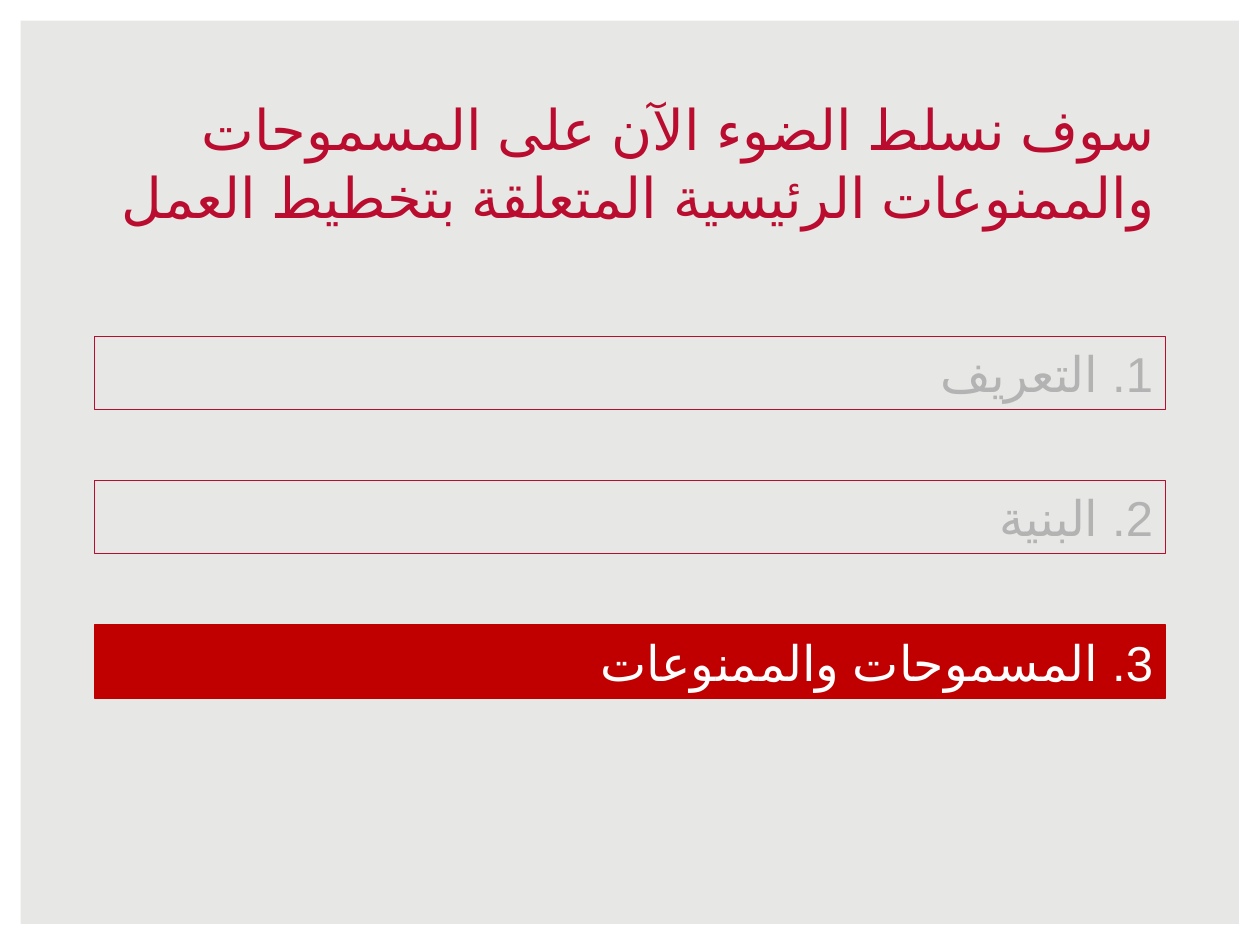
from lxml.etree import SubElement
from pptx import Presentation
from pptx.dml.color import RGBColor
from pptx.enum.lang import MSO_LANGUAGE_ID
from pptx.enum.shapes import MSO_SHAPE
from pptx.enum.text import MSO_ANCHOR, PP_ALIGN
from pptx.oxml.ns import qn
from pptx.util import Pt

EMU_PER_PX = 9144  # 100 px to the inch
FONT = "Arial"
CRIMSON, RED, GREY, WHITE, PAPER = "BA0C2F", "C00000", "B3B3B3", "FFFFFF", "E7E7E5"

TITLE = "سوف نسلط الضوء الآن على المسموحات والممنوعات الرئيسية المتعلقة بتخطيط العمل"
TOPICS = ["1. التعريف", "2. البنية", "3. المسموحات والممنوعات"]
CURRENT_TOPIC = 2


def px(length):
    return round(length * EMU_PER_PX)


def rgb(hex_color):
    return RGBColor.from_string(hex_color)


def write_rtl(frame, wording, size, color, anchor):
    frame.word_wrap = True
    frame.vertical_anchor = anchor
    paragraph = frame.paragraphs[0]
    paragraph.alignment = PP_ALIGN.RIGHT
    paragraph._p.get_or_add_pPr().set("rtl", "1")
    run = paragraph.add_run()
    run.text = wording
    run.font.size = Pt(size)
    run.font.name = FONT
    run.font.language_id = MSO_LANGUAGE_ID.ARABIC
    run.font.color.rgb = rgb(color)
    # Arabic letters take the complex-script font
    SubElement(run._r.get_or_add_rPr(), qn("a:cs"), typeface=FONT)


def add_panel(slide, preset, left, top, width, height, fill=None, line=None):
    panel = slide.shapes.add_shape(preset, px(left), px(top), px(width), px(height))
    panel.shadow.inherit = False
    if fill:
        panel.fill.solid()
        panel.fill.fore_color.rgb = rgb(fill)
    else:
        panel.fill.background()
    if line:
        panel.line.color.rgb = rgb(line)
        panel.line.width = Pt(0.75)
    else:
        panel.line.fill.background()
    return panel


def draw_backdrop(slide, left, top, width, height):
    slide.background.fill.solid()
    slide.background.fill.fore_color.rgb = rgb(PAPER)
    border = add_panel(slide, MSO_SHAPE.FRAME, left, top, width, height, fill=WHITE)
    border.adjustments[0] = 0.022


def draw_title(slide, left, top, width, height):
    title = slide.shapes.add_textbox(px(left), px(top), px(width), px(height))
    write_rtl(title.text_frame, TITLE, 32, CRIMSON, MSO_ANCHOR.BOTTOM)


def draw_agenda(slide, left, top, width, height, bar_height):
    # Bars spread evenly from the top to the bottom of the box
    pitch = (height - bar_height) / (len(TOPICS) - 1)
    for index, topic in enumerate(TOPICS):
        current = index == CURRENT_TOPIC
        bar = add_panel(slide, MSO_SHAPE.RECTANGLE, left, top + index * pitch,
                        width, bar_height, fill=RED if current else None,
                        line=RED if current else CRIMSON)
        write_rtl(bar.text_frame, topic, 28, WHITE if current else GREY,
                  MSO_ANCHOR.MIDDLE)


def main():
    deck = Presentation()
    deck.slide_width, deck.slide_height = px(1000), px(750)
    slide = deck.slides.add_slide(deck.slide_layouts[6])
    draw_backdrop(slide, 0, 0, 1000, 750)
    draw_title(slide, 77, 87, 850, 100)
    draw_agenda(slide, 75, 267, 850, 287, bar_height=58)
    deck.save("out.pptx")


if __name__ == "__main__":
    main()
